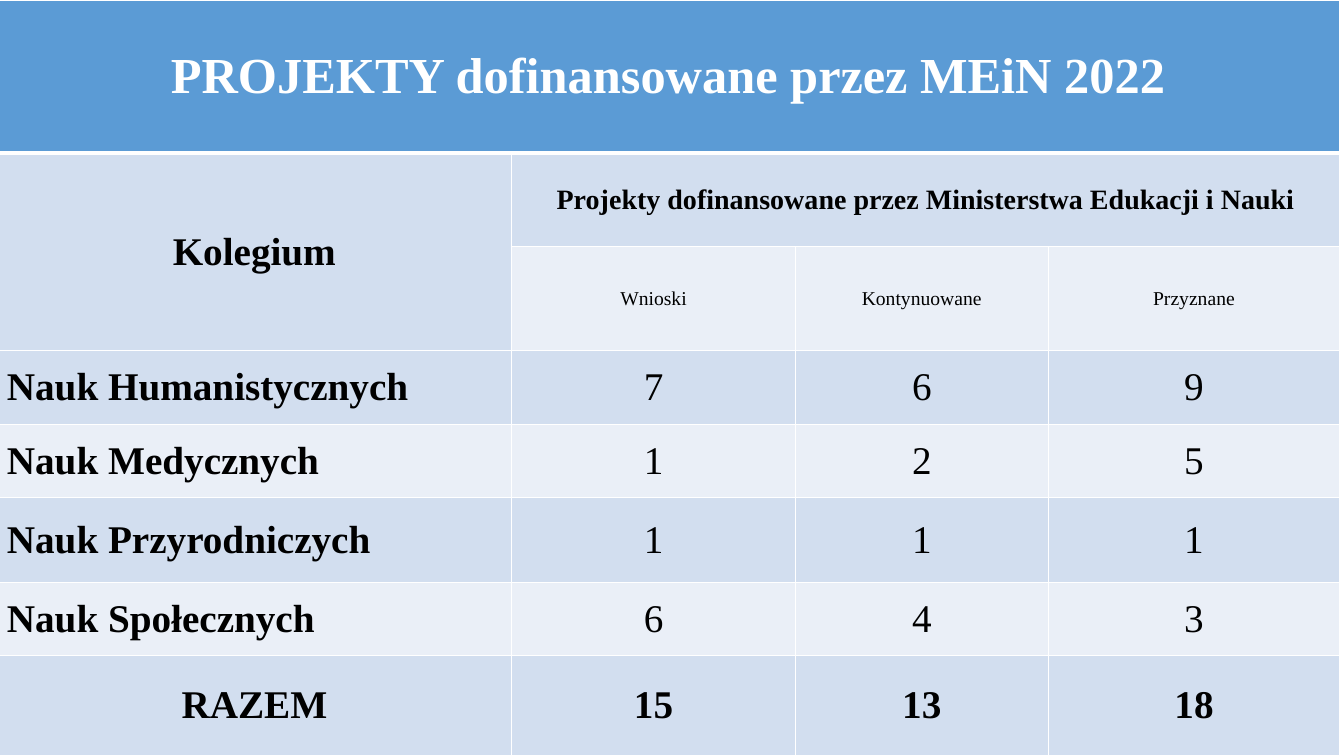
from lxml import etree
from pptx import Presentation
from pptx.dml.color import RGBColor
from pptx.enum.text import MSO_ANCHOR as Anchor, PP_ALIGN as Align
from pptx.oxml.ns import qn
from pptx.util import Cm, Pt

COLORS = {"title": "5B9BD5", "dark": "D2DEEF", "light": "EAEFF7",
          "white": "FFFFFF", "black": "000000"}
FONT = "Times New Roman"
COLUMN_WIDTHS = [12.98, 7.14, 6.38, 7.34]
ROW_HEIGHTS = [3.86, 2.36, 2.62, 1.85, 1.85, 2.13, 1.85, 2.51]
ROWS = [
    ["PROJEKTY dofinansowane przez MEiN 2022", "", "", ""],
    ["Kolegium", "Projekty dofinansowane przez Ministerstwa Edukacji i Nauki", "", ""],
    ["", "Wnioski", "Kontynuowane", "Przyznane"],
    ["Nauk Humanistycznych", "7", "6", "9"],
    ["Nauk Medycznych", "1", "2", "5"],
    ["Nauk Przyrodniczych", "1", "1", "1"],
    ["Nauk Społecznych", "6", "4", "3"],
    ["RAZEM", "15", "13", "18"],
]
TITLE, HEADING, SUBHEADING, TOTAL = 0, 1, 2, len(ROWS) - 1


def add_border(cell, side, points):
    line = etree.SubElement(cell._tc.get_or_add_tcPr(), qn(f"a:{side}"), w=str(Pt(points)))
    fill = etree.SubElement(line, qn("a:solidFill"))
    etree.SubElement(fill, qn("a:srgbClr"), val=COLORS["white"])


deck = Presentation()
deck.slide_width, deck.slide_height = Cm(33.87), Cm(19.05)
page = deck.slides.add_slide(deck.slide_layouts[6])

table = page.shapes.add_table(len(ROWS), len(COLUMN_WIDTHS), Cm(-0.08), Cm(0),
                              Cm(sum(COLUMN_WIDTHS)), Cm(sum(ROW_HEIGHTS))).table
for column, width in zip(table.columns, COLUMN_WIDTHS):
    column.width = Cm(width)
for row, height in zip(table.rows, ROW_HEIGHTS):
    row.height = Cm(height)

for row, texts in enumerate(ROWS):
    band = "title" if row == TITLE else "dark" if row % 2 else "light"
    for column, text in enumerate(texts):
        cell = table.cell(row, column)
        cell.vertical_anchor = Anchor.MIDDLE
        borders = {"lnL": 1, "lnR": 1,
                   "lnT": 3 if row == HEADING else 1,
                   "lnB": 3 if row == TITLE else 1}
        for side, points in borders.items():
            add_border(cell, side, points)
        cell.fill.solid()
        cell.fill.fore_color.rgb = RGBColor.from_string(
            COLORS["dark" if (row, column) == (SUBHEADING, 0) else band])
        if not text:
            continue

        para = cell.text_frame.paragraphs[0]
        is_college = column == 0 and SUBHEADING < row < TOTAL
        para.alignment = Align.LEFT if is_college else Align.CENTER
        span = para.add_run()
        span.text = text
        size = {TITLE: 36, HEADING: 28 if column == 0 else 20, SUBHEADING: 14}.get(row, 28)
        style = {"name": FONT, "size": Pt(size),
                 "bold": column == 0 or row in (HEADING, TOTAL)}
        for name, value in style.items():
            setattr(span.font, name, value)
        span.font.color.rgb = RGBColor.from_string(
            COLORS["white" if row == TITLE else "black"])

for first, last in [((0, 0), (0, 3)), ((1, 0), (2, 0)), ((1, 1), (1, 3))]:
    table.cell(*first).merge(table.cell(*last))

deck.save("out.pptx")
